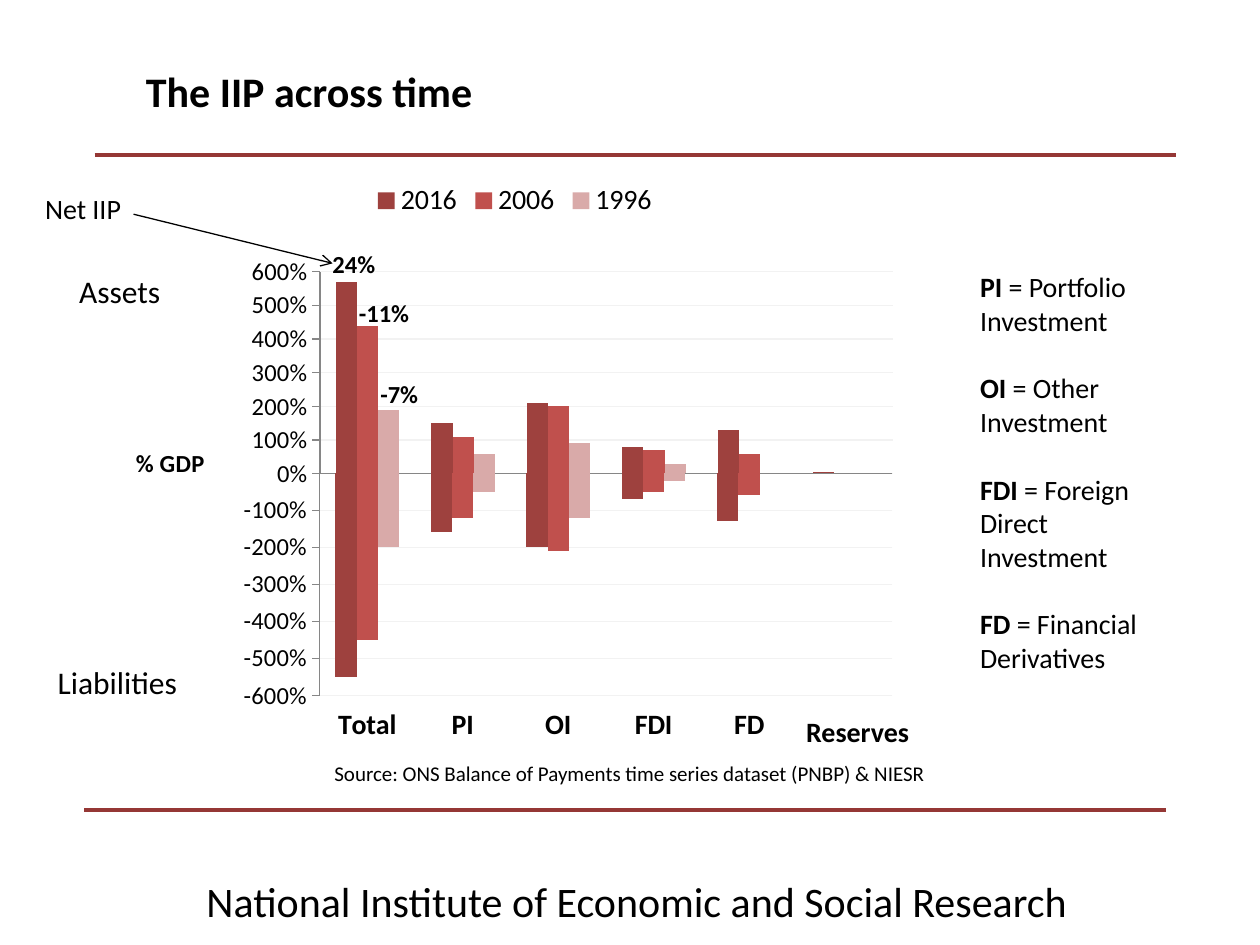
from typing import Any, NamedTuple

from lxml.etree import SubElement
from pptx import Presentation
from pptx.chart.data import CategoryChartData
from pptx.dml.color import RGBColor
from pptx.enum.chart import XL_CHART_TYPE as ChartType
from pptx.enum.chart import XL_LEGEND_POSITION as LegendPos
from pptx.enum.chart import XL_TICK_LABEL_POSITION as LabelPos
from pptx.enum.chart import XL_TICK_MARK as Tick
from pptx.enum.shapes import MSO_CONNECTOR as Conn
from pptx.enum.text import PP_ALIGN as Align
from pptx.oxml import parse_xml
from pptx.oxml.ns import nsdecls, qn
from pptx.util import Inches, Pt

WIDTH, HEIGHT = 10, 7.5
BLACK, RULE, GRID, AXIS = "000000", "953735", "F2F2F2", "868686"
BAR_COLOURS = ("9E413E", "C0504D", "D9AAA9")


class Box(NamedTuple):
    """Left, top, width and height in percent of the slide."""
    x: float
    y: float
    w: float
    h: float


class Label(NamedTuple):
    """A single-line text with its place and look."""
    text: str
    box: Box
    size: float
    bold: bool = False
    align: Align = Align.LEFT


class Line(NamedTuple):
    """A straight line between two points in percent of the slide."""
    x1: float
    y1: float
    x2: float
    y2: float
    colour: str
    width: float
    arrow: bool = False


class Bars(NamedTuple):
    """A column chart: place, plot layout, value range, label format and data."""
    box: Box
    plot: tuple[float, float, float, float]
    low: float
    high: float
    label_format: str
    cats: tuple[str, ...]
    series: dict[str, tuple]


LINES = [
    Line(7.5, 16.4, 93.3, 16.4, RULE, 2.25),
    Line(6.7, 85.73, 92.5, 85.73, RULE, 2.25),
]
ARROW = Line(10.6, 22.67, 26.4, 27.87, BLACK, 0.75, True)
LABELS = [
    Label("National Institute of Economic and Social Research", Box(15.4, 92, 79.5, 5.33), 24),
    Label("The IIP across time", Box(10.6, 6.27, 80.3, 6.67), 24, True),
    Label("24%", Box(25.4, 25.73, 6.3, 4.53), 14, True),
    Label("-11%", Box(27.5, 30.93, 7.1, 4.53), 14, True),
    Label("-7%", Box(29.2, 39.47, 5.4, 4.53), 14, True),
    Label("Reserves", Box(63, 74.93, 16.5, 4.93), 16, True),
    Label("Source: ONS Balance of Payments time series dataset (PNBP) & NIESR",
          Box(1.2, 79.87, 73.2, 4), 12, align=Align.RIGHT),
    Label("Net IIP", Box(2.6, 19.6, 8.7, 4.93), 16),
    Label("Assets", Box(5.3, 28.13, 10.6, 5.33), 18),
    Label("Liabilities", Box(3.6, 69.47, 12.3, 5.33), 18),
]
KEY_BOX = Box(76.8, 27.87, 16.5, 44.4)
KEY = {"PI": "Portfolio Investment", "OI": "Other Investment",
       "FDI": "Foreign Direct Investment", "FD": "Financial Derivatives"}
ASSETS = Bars(
    Box(8.5, 17.87, 64.7, 35.6), (0.261, 0.306, 0.703, 0.601), 0, 6, "0%",
    ("1", "2", "3", "4", "5", "6"),
    {"2016": (5.7, 1.5, 2.1, 0.8, 1.3, 0.05),
     "2006": (4.4, 1.1, 2, 0.7, 0.6, 0),
     "1996": (1.9, 0.6, 0.9, 0.3, 0, 0)})
LIABILITIES = Bars(
    Box(16.2, 46.8, 64.5, 35.6), (0.142, 0.092, 0.705, 0.661), -6, 0, "0%;-0%;",
    ("Total", "PI", "OI", "FDI", "FD", ""),
    {"Series 1": (-5.5, -1.6, -2, -0.7, -1.3, None),
     "Series 2": (-4.5, -1.2, -2.1, -0.5, -0.6, None),
     "Series 3": (-2, -0.5, -1.2, -0.2, 0, None)})


def rgb(colour: str) -> RGBColor:
    """Turn a hex string into a colour."""
    return RGBColor.from_string(colour)


def across(share: float) -> int:
    """Convert a percentage of the slide width."""
    return Inches(WIDTH * share / 100)


def down(share: float) -> int:
    """Convert a percentage of the slide height."""
    return Inches(HEIGHT * share / 100)


def place(box: Box) -> tuple[int, int, int, int]:
    """Convert a box to slide lengths."""
    return across(box.x), down(box.y), across(box.w), down(box.h)


def assign(obj: Any, values: dict[str, Any]) -> None:
    """Set every attribute named in the dict."""
    for name, value in values.items():
        setattr(obj, name, value)


def style_font(font: Any, size: float, bold: bool = False) -> None:
    """Give a font the slide's typeface, colour and a size."""
    assign(font, {"name": "Calibri", "size": Pt(size), "bold": bold})
    font.color.rgb = rgb(BLACK)


def style_line(line: Any, colour: str, width: float) -> None:
    """Colour a line and set its width."""
    line.color.rgb = rgb(colour)
    line.width = Pt(width)


def add_run(p: Any, text: str, size: float, bold: bool = False) -> None:
    """Append a styled run to a paragraph."""
    r = p.add_run()
    r.text = text
    style_font(r.font, size, bold)


def add_frame(slide: Any, box: Box) -> Any:
    """Add a wrapping text box and return its frame."""
    tf = slide.shapes.add_textbox(*place(box)).text_frame
    tf.word_wrap = True
    return tf


def add_label(slide: Any, label: Label) -> None:
    """Draw one label."""
    p = add_frame(slide, label.box).paragraphs[0]
    p.alignment = label.align
    add_run(p, label.text, label.size, label.bold)


def add_key(slide: Any) -> None:
    """Draw the list of abbreviations."""
    tf = add_frame(slide, KEY_BOX)
    for i, (short, meaning) in enumerate(KEY.items()):
        p = tf.add_paragraph() if i else tf.paragraphs[0]
        p.space_before = Pt(19.5 if i else 0)
        add_run(p, short, 16, True)
        add_run(p, f" = {meaning}", 16)


def add_line(slide: Any, line: Line) -> None:
    """Draw a line, with an arrowhead at its end if asked."""
    s = slide.shapes.add_connector(Conn.STRAIGHT, across(line.x1), down(line.y1),
                                   across(line.x2), down(line.y2))
    style_line(s.line, line.colour, line.width)
    if line.arrow:
        SubElement(s.line._get_or_add_ln(), qn("a:tailEnd"), type="arrow")
    SubElement(s._element.spPr, qn("a:effectLst"))


def set_layout(parent: Any, **shares: Any) -> None:
    """Fix the manual layout of a chart part."""
    items = "".join(f'<c:{name} val="{value}"/>' for name, value in shares.items())
    layout = parse_xml(f'<c:layout {nsdecls("c")}><c:manualLayout>{items}</c:manualLayout></c:layout>')
    old = parent.find(qn("c:layout"))
    if old is None:
        parent.insert(0, layout)
    else:
        parent.replace(old, layout)


def add_bars(slide: Any, bars: Bars) -> Any:
    """Draw a transparent clustered column chart and return it."""
    data = CategoryChartData()
    data.categories = bars.cats
    for name, values in bars.series.items():
        data.add_series(name, values)
    chart = slide.shapes.add_chart(ChartType.COLUMN_CLUSTERED, *place(bars.box), data).chart
    assign(chart, {"has_title": False, "has_legend": False})
    style_font(chart.font, 10)
    plot, val, cat = chart.plots[0], chart.value_axis, chart.category_axis
    assign(plot, {"gap_width": 150, "overlap": 0, "vary_by_categories": False})
    for series, colour in zip(plot.series, BAR_COLOURS):
        series.invert_if_negative = False
        series.format.fill.solid()
        series.format.fill.fore_color.rgb = rgb(colour)
    assign(val, {"minimum_scale": bars.low, "maximum_scale": bars.high, "major_unit": 1,
                 "major_tick_mark": Tick.OUTSIDE, "has_major_gridlines": True})
    assign(val.tick_labels, {"number_format": bars.label_format, "number_format_is_linked": False})
    style_font(val.tick_labels.font, 14)
    style_line(val.major_gridlines.format.line, GRID, 0.75)
    assign(cat, {"major_tick_mark": Tick.NONE, "tick_label_position": LabelPos.LOW})
    style_font(cat.tick_labels.font, 16, True)
    for axis in (val, cat):
        style_line(axis.format.line, AXIS, 0.75)
    area = chart.element.find(f'{qn("c:chart")}/{qn("c:plotArea")}')
    set_layout(area, layoutTarget="inner", xMode="edge", yMode="edge",
               **dict(zip("xywh", bars.plot)))
    clear = f'<c:spPr {nsdecls("c", "a")}><a:noFill/><a:ln><a:noFill/></a:ln></c:spPr>'
    area.append(parse_xml(clear))
    chart.element.find(qn("c:chart")).addnext(parse_xml(clear))
    return chart


def add_assets(slide: Any) -> None:
    """Draw the upper chart with its legend and axis title."""
    chart = add_bars(slide, ASSETS)
    chart.category_axis.visible = False
    chart.has_legend = True
    assign(chart.legend, {"position": LegendPos.TOP, "include_in_layout": False})
    style_font(chart.legend.font, 16)
    tf = chart.value_axis.axis_title.text_frame
    add_run(tf.paragraphs[0], "% GDP", 14, True)
    tf._txBody.bodyPr.set("rot", "0")
    title = chart.element.xpath(".//c:valAx/c:title")[0]
    set_layout(title, xMode="edge", yMode="edge", x=0.03, y=0.81)


def main() -> None:
    """Build and save the slide."""
    prs = Presentation()
    assign(prs, {"slide_width": Inches(WIDTH), "slide_height": Inches(HEIGHT)})
    slide = prs.slides.add_slide(prs.slide_layouts[6])
    for line in LINES:
        add_line(slide, line)
    add_assets(slide)
    add_bars(slide, LIABILITIES)
    add_key(slide)
    for label in LABELS:
        add_label(slide, label)
    add_line(slide, ARROW)
    prs.save("out.pptx")


if __name__ == "__main__":
    main()
